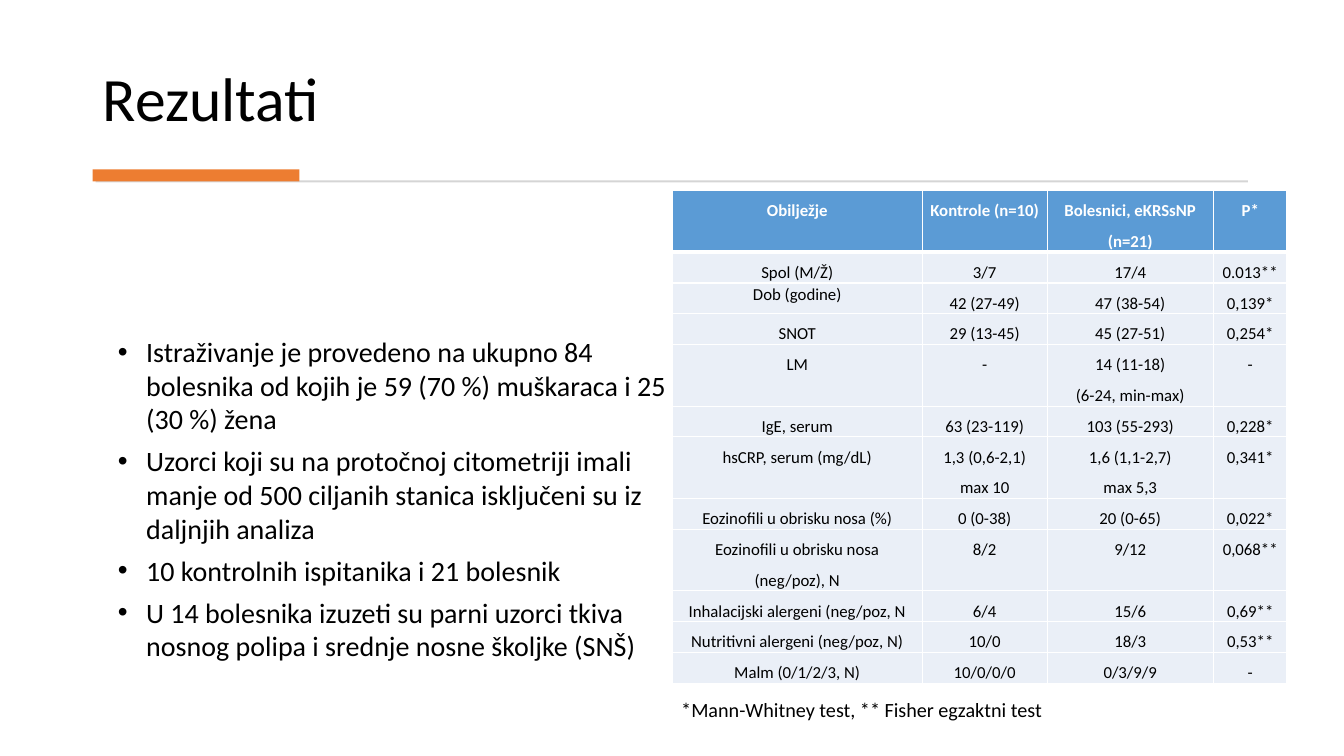
from lxml import etree
from pptx import Presentation
from pptx.dml.color import RGBColor
from pptx.enum.shapes import MSO_SHAPE
from pptx.enum.text import MSO_ANCHOR, MSO_AUTO_SIZE, PP_ALIGN
from pptx.oxml.ns import qn
from pptx.util import Pt

RECT = MSO_SHAPE.RECTANGLE
LEFT, CENTER = PP_ALIGN.LEFT, PP_ALIGN.CENTER
TOP, BOTTOM = MSO_ANCHOR.TOP, MSO_ANCHOR.BOTTOM
NO_FIT = MSO_AUTO_SIZE.NONE

# Content
TITLE = "Rezultati"
BULLETS = [
    "Istraživanje je provedeno na ukupno 84 bolesnika od kojih je 59 (70 %) muškaraca i 25 (30 %) žena",
    "Uzorci koji su na protočnoj citometriji imali manje od 500 ciljanih stanica isključeni su iz daljnjih analiza",
    "10 kontrolnih ispitanika i 21 bolesnik",
    "U 14 bolesnika izuzeti su parni uzorci tkiva nosnog polipa i srednje nosne školjke (SNŠ)",
]
ROWS = [
    ("Obilježje", "Kontrole (n=10)", "Bolesnici, eKRSsNP (n=21)", "P*"),
    ("Spol (M/Ž)", "3/7", "17/4", "0.013**"),
    ("Dob (godine)", "42 (27-49)", "47 (38-54)", "0,139*"),
    ("SNOT", "29 (13-45)", "45 (27-51)", "0,254*"),
    ("LM", "-", "14 (11-18)\n(6-24, min-max)", "-"),
    ("IgE, serum", "63 (23-119)", "103 (55-293)", "0,228*"),
    ("hsCRP, serum (mg/dL)", "1,3 (0,6-2,1)\nmax 10", "1,6 (1,1-2,7)\nmax 5,3", "0,341*"),
    ("Eozinofili u obrisku nosa (%)", "0 (0-38)", "20 (0-65)", "0,022*"),
    ("Eozinofili u obrisku nosa (neg/poz), N", "8/2", "9/12", "0,068**"),
    ("Inhalacijski alergeni (neg/poz, N", "6/4", "15/6", "0,69**"),
    ("Nutritivni alergeni (neg/poz, N)", "10/0", "18/3", "0,53**"),
    ("Malm (0/1/2/3, N)", "10/0/0/0", "0/3/9/9", "-"),
]
FOOTNOTE = "*Mann-Whitney test, ** Fisher egzaktni test"
COL_WIDTHS = [178.6, 89.2, 118.8, 52.6]
LINE_H = 22
TWO_LINE_ROWS = {0, 4, 6, 8}
AGE_ROW = 2  # its label is set with tighter line spacing


def rgb(value):
    return RGBColor.from_string(value)


def place(sp, x, y, w, h):
    sp.left, sp.top, sp.width, sp.height = Pt(x), Pt(y), Pt(w), Pt(h)


def write(p, text, size, color="000000", bold=False):
    r = p.add_run()
    r.text = text
    r.font.name, r.font.size, r.font.bold = "Calibri", Pt(size), bold
    r.font.color.rgb = rgb(color)


def bar(s, x, y, w, h, color):
    sp = s.shapes.add_shape(RECT, Pt(x), Pt(y), Pt(w), Pt(h))
    sp.shadow.inherit = False
    sp.fill.solid()
    sp.fill.fore_color.rgb = rgb(color)
    sp.line.fill.background()


def border(cell, side, width):
    ln = etree.SubElement(cell._tc.get_or_add_tcPr(), qn("a:" + side), w=str(Pt(width)))
    fill = etree.SubElement(ln, qn("a:solidFill"))
    etree.SubElement(fill, qn("a:srgbClr"), val="FFFFFF")


prs = Presentation()
prs.slide_width, prs.slide_height = Pt(960), Pt(540)
s = prs.slides.add_slide(prs.slide_layouts[1])

# Title
title, body = s.shapes.title, s.placeholders[1]
place(title, 66.2, 20.2, 827.3, 80)
tf = title.text_frame
tf.auto_size, tf.vertical_anchor = NO_FIT, BOTTOM
p = tf.paragraphs[0]
p.alignment, p.line_spacing = LEFT, 0.9
write(p, TITLE, 44)

# Rule with accent
bar(s, 68.4, 128.9, 823, 1.4, "D5D5D5")
bar(s, 66.2, 121, 147.6, 8.6, "ED7D31")

# Bullet list
place(body, 77, 235.4, 415.4, 243.4)
tf = body.text_frame
tf.auto_size, tf.vertical_anchor = NO_FIT, TOP
for i, text in enumerate(BULLETS):
    p = tf.add_paragraph() if i else tf.paragraphs[0]
    p.space_before, p.space_after = Pt(0), Pt(6)
    pPr = p._p.get_or_add_pPr()
    pPr.set("marL", str(Pt(20.2)))
    pPr.set("indent", str(Pt(-20.2)))
    etree.SubElement(pPr, qn("a:buChar"), char="•")
    write(p, text, 20)

# Results table
heights = [LINE_H * (2 if i in TWO_LINE_ROWS else 1) for i in range(len(ROWS))]
table = s.shapes.add_table(len(ROWS), len(COL_WIDTHS), Pt(480.2), Pt(136.1),
                           Pt(sum(COL_WIDTHS)), Pt(sum(heights))).table
for col, width in zip(table.columns, COL_WIDTHS):
    col.width = Pt(width)
for i, (row, height) in enumerate(zip(ROWS, heights)):
    table.rows[i].height = Pt(height)
    header = i == 0
    for j, text in enumerate(row):
        cell = table.cell(i, j)
        cell.margin_left = cell.margin_right = Pt(5)
        cell.margin_top = cell.margin_bottom = Pt(0)
        for side in ("lnL", "lnR", "lnT", "lnB"):
            thick = (header and side == "lnB") or (i == 1 and side == "lnT")
            border(cell, side, 3 if thick else 1)
        cell.fill.solid()
        cell.fill.fore_color.rgb = rgb("5B9BD5" if header else "EAEFF7")
        tf = cell.text_frame
        for k, line in enumerate(text.split("\n")):
            p = tf.add_paragraph() if k else tf.paragraphs[0]
            p.alignment = CENTER
            p.line_spacing = 1.07 if (i, j) == (AGE_ROW, 0) else 1.5
            write(p, line, 12, "FFFFFF" if header else "000000", header)

# Footnote
tf = s.shapes.add_textbox(Pt(479.5), Pt(494.6), Pt(275), Pt(24.5)).text_frame
tf.word_wrap = False
p = tf.paragraphs[0]
p.space_after = Pt(6)
write(p, FOOTNOTE, 14.4)

prs.save("out.pptx")
